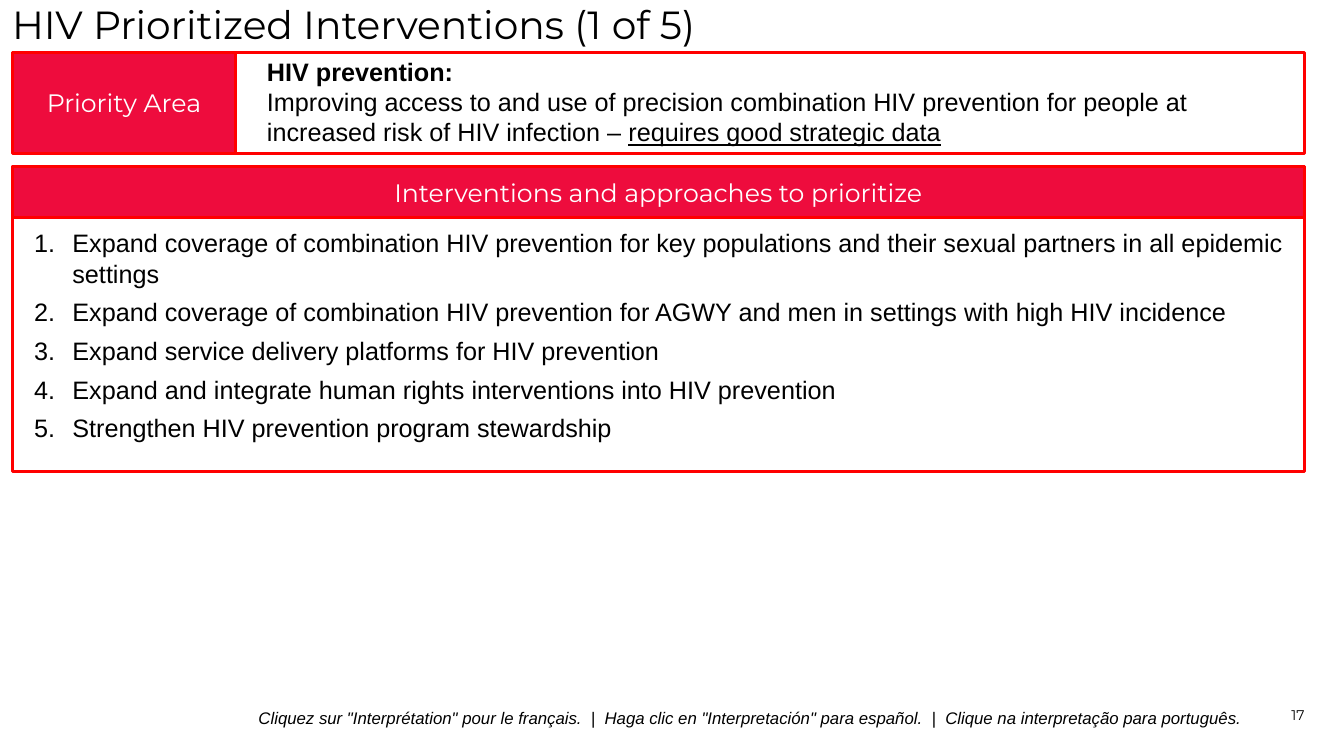
from lxml import etree
from pptx import Presentation, util as u
from pptx.dml.color import RGBColor
from pptx.enum import shapes, text
from pptx.oxml.ns import qn

COLORS = {"ink": "000000", "paper": "FFFFFF", "band": "EE0C3D", "border": "FF0000"}
WIDTH, HEIGHT = 13.33, 7.5
MARGIN = 0.12
PANEL_WIDTH = 12.82
BODY, HEADING = "Arial", "Montserrat"
INTERVENTIONS = [
    "Expand coverage of combination HIV prevention for key populations and their sexual partners in all epidemic settings",
    "Expand coverage of combination HIV prevention for AGWY and men in settings with high HIV incidence",
    "Expand service delivery platforms for HIV prevention",
    "Expand and integrate human rights interventions into HIV prevention",
    "Strengthen HIV prevention program stewardship",
]


def color(name):
    return RGBColor.from_string(COLORS[name])


def add_span(para, words, size=18, face=BODY, ink="ink", **style):
    span = para.add_run()
    span.text = words
    span.font.size = u.Pt(size)
    span.font.name = face
    span.font.color.rgb = color(ink)
    for name, value in style.items():
        setattr(span.font, name, value)


def set_insets(frame, size):
    frame.margin_left = frame.margin_top = frame.margin_right = frame.margin_bottom = u.Inches(size)


def add_box(page, area, anchor=text.MSO_ANCHOR.TOP):
    box = page.shapes.add_textbox(*map(u.Inches, area))
    box.text_frame.word_wrap = True
    box.text_frame.vertical_anchor = anchor
    return box.text_frame


def add_panel(page, area, fill, label=None):
    panel = page.shapes.add_shape(shapes.MSO_SHAPE.RECTANGLE, *map(u.Inches, area))
    panel.shadow.inherit = False
    panel.fill.solid()
    panel.fill.fore_color.rgb = color(fill)
    panel.line.color.rgb = color("border")
    panel.line.width = u.Pt(2.25)
    if label:
        panel.text_frame.vertical_anchor = text.MSO_ANCHOR.MIDDLE
        para = panel.text_frame.paragraphs[0]
        para.alignment = text.PP_ALIGN.CENTER
        add_span(para, label, face=HEADING, ink="paper")


def number_paragraph(para, indent=0.38):
    props = para._p.get_or_add_pPr()
    props.set("marL", str(u.Inches(indent)))
    props.set("indent", str(-u.Inches(indent)))
    etree.SubElement(props, qn("a:buFont"), typeface="+mj-lt")
    etree.SubElement(props, qn("a:buAutoNum"), type="arabicPeriod")


def place_title(page, area):
    title = page.shapes.title
    title.left, title.top, title.width, title.height = map(u.Inches, area)
    frame = title.text_frame
    frame.auto_size = text.MSO_AUTO_SIZE.NONE
    frame.vertical_anchor = text.MSO_ANCHOR.TOP
    set_insets(frame, 0)
    para = frame.paragraphs[0]
    para.alignment = text.PP_ALIGN.LEFT
    para.line_spacing = 0.9
    add_span(para, "HIV Prioritized Interventions (1 of 5)", 28, HEADING)


def add_priority_area(page, left, top, width, height):
    label_width = 2.22
    overlap = 0.19
    body_left = left + label_width - overlap
    add_panel(page, (body_left, top, left + width - body_left, height), "paper")
    add_panel(page, (left, top, label_width, height), "band", "Priority Area")
    frame = add_box(page, (body_left + 0.4, top - 0.01, 10.27, height))
    add_span(frame.paragraphs[0], "HIV prevention:", bold=True)
    para = frame.add_paragraph()
    add_span(para, "Improving access to and use of precision combination HIV prevention "
                   "for people at increased risk of HIV infection – ")
    add_span(para, "requires good strategic data", underline=True)


def add_interventions(page, left, top, width, height):
    header = 0.51
    add_panel(page, (left, top, width, height), "paper")
    add_panel(page, (left, top, width, header), "band", "Interventions and approaches to prioritize")
    frame = add_box(page, (left + MARGIN, top + header + 0.05, width - MARGIN, 2.26))
    for index, item in enumerate(INTERVENTIONS):
        para = frame.add_paragraph() if index else frame.paragraphs[0]
        para.space_after = u.Pt(6)
        number_paragraph(para)
        add_span(para, item)


def add_footer(page, left, top, width, height):
    frame = add_box(page, (left, top, width, height), text.MSO_ANCHOR.BOTTOM)
    para = frame.paragraphs[0]
    para.alignment = text.PP_ALIGN.CENTER
    add_span(para, 'Cliquez sur "Interprétation" pour le français.  |  '
                   'Haga clic en "Interpretación" para español.  |  '
                   'Clique na interpretação para português.', 12, italic=True)
    number_width = 0.98
    number_left = MARGIN + PANEL_WIDTH - number_width
    frame = add_box(page, (number_left, top - 0.19, number_width, 0.4), text.MSO_ANCHOR.BOTTOM)
    set_insets(frame, 0)
    para = frame.paragraphs[0]
    para.alignment = text.PP_ALIGN.RIGHT
    add_span(para, "17", 10, HEADING)


def main():
    deck = Presentation()
    deck.slide_width, deck.slide_height = u.Inches(WIDTH), u.Inches(HEIGHT)
    page = deck.slides.add_slide(deck.slide_layouts[5])
    page.background.fill.solid()
    page.background.fill.fore_color.rgb = color("paper")
    place_title(page, (MARGIN, 0.06, 12.55, 0.51))
    add_priority_area(page, MARGIN, 0.52, PANEL_WIDTH, 1)
    add_interventions(page, MARGIN, 1.65, PANEL_WIDTH, 3.03)
    add_footer(page, 2.17, 6.97, 10.55, 0.3)
    deck.save("out.pptx")


if __name__ == "__main__":
    main()
